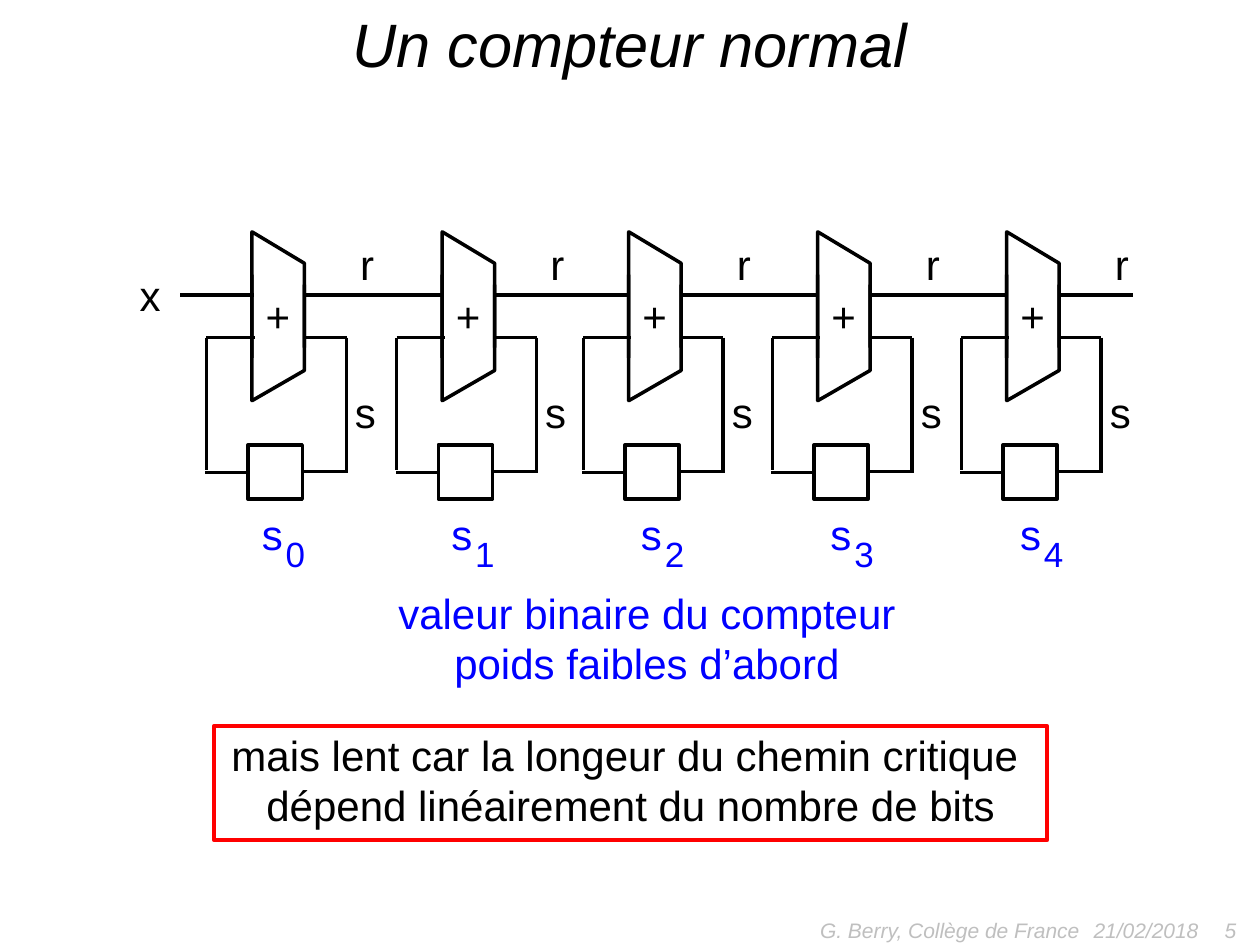
from dataclasses import dataclass
from typing import NamedTuple

from lxml.etree import SubElement
from pptx import Presentation
from pptx.dml.color import RGBColor
from pptx.enum.shapes import MSO_CONNECTOR, MSO_SHAPE
from pptx.enum.text import MSO_ANCHOR, MSO_AUTO_SIZE, PP_ALIGN
from pptx.oxml.ns import qn
from pptx.util import Pt


@dataclass(frozen=True)
class Theme:
    font: str = "Arial"
    black: RGBColor = RGBColor(0, 0, 0)
    blue: RGBColor = RGBColor(0, 0, 255)
    red: RGBColor = RGBColor(255, 0, 0)
    grey: RGBColor = RGBColor(0xBF, 0xBF, 0xBF)
    title: float = 35
    body: float = 24
    index: float = 20
    foot: float = 12
    wire: float = 2
    frame: float = 2.25


class Point(NamedTuple):
    x: float
    y: float


class Box(NamedTuple):
    left: float
    top: float
    width: float
    height: float

    def lengths(self) -> list:
        return [Pt(v) for v in self]


class Label(NamedTuple):
    text: str
    box: Box


class Wire(NamedTuple):
    start: Point
    end: Point


class Foot(NamedTuple):
    text: str
    box: Box
    align: PP_ALIGN


THEME = Theme()
LEFT, CENTER, RIGHT = PP_ALIGN.LEFT, PP_ALIGN.CENTER, PP_ALIGN.RIGHT

# Each stage is described relative to the left edge of its adder.
STAGES = (144, 252.7, 359.3, 467.3, 575.3)
CARRY, SUM, LOOP = 168.5, 193, 270
HALVES = (
    (Point(0, 157), Point(0, 229), Point(30, 211.7), Point(30, 162.7)),
    (Point(0, 204.5), Point(0, 132.5), Point(30, 150.5), Point(30, 198.7)),
)
WIRES = (
    Wire(Point(30, SUM), Point(54, SUM)),
    Wire(Point(30, CARRY), Point(72, CARRY)),
    Wire(Point(54, SUM), Point(54, LOOP)),
    Wire(Point(54, LOOP - 0.5), Point(29, LOOP - 0.5)),
    Wire(Point(-41, CARRY), Point(1, CARRY)),
    Wire(Point(-26, SUM), Point(1.5, SUM)),
    Wire(Point(-26, SUM), Point(-26, LOOP - 1.4)),
    Wire(Point(-3, LOOP), Point(-26.6, LOOP)),
)
LABELS = (
    Label("+", Box(0.7, 162.7, 28.8, 36.3)),
    Label("r", Box(54.7, 132.5, 22.3, 36.3)),
    Label("s", Box(51.8, 217.4, 26.6, 36.3)),
)
REGISTER = Box(-2.2, 254.2, 31, 31)
BITS_LEFT, BITS_STEP = 142.6, 108.3
FEET = (
    Foot("21/02/2018", Box(617.8, 517, 167.8, 28.8), LEFT),
    Foot(" 5", Box(545.8, 517, 167.8, 28.8), RIGHT),
    Foot("G. Berry, Collège de France", Box(396, 517, 228.2, 28.8), RIGHT),
)


def shift(box: Box, dx: float) -> Box:
    return box._replace(left=box.left + dx)


def write(frame, text: str, size: float, color: RGBColor,
          align: PP_ALIGN = LEFT, italic: bool = False) -> None:
    """Fill a text frame, one paragraph per line."""
    frame.text = text
    for para in frame.paragraphs:
        para.alignment = align
        font = para.font
        font.name, font.size, font.italic = THEME.font, Pt(size), italic
        font.color.rgb = color


def add_text(shapes, text: str, box: Box, size: float = THEME.body,
             color: RGBColor = THEME.black, align: PP_ALIGN = LEFT):
    frame = shapes.add_textbox(*box.lengths()).text_frame
    frame.word_wrap = False
    write(frame, text, size, color, align)


def outline(shape, color: RGBColor, width: float) -> None:
    shape.shadow.inherit = False
    shape.fill.background()
    shape.line.color.rgb = color
    shape.line.width = Pt(width)


def add_rect(shapes, box: Box, color: RGBColor = THEME.black,
             width: float = THEME.wire):
    rect = shapes.add_shape(MSO_SHAPE.RECTANGLE, *box.lengths())
    outline(rect, color, width)
    return rect


def add_half(shapes, half: tuple, dx: float) -> None:
    """Draw one open half of the adder outline."""
    first, *rest = [(Pt(x + dx), Pt(y)) for x, y in half]
    path = shapes.build_freeform(*first)
    path.add_line_segments(rest, close=False)
    outline(path.convert_to_shape(), THEME.black, THEME.wire)


def add_wire(shapes, wire: Wire, dx: float) -> None:
    start, end = wire
    line = shapes.add_connector(
        MSO_CONNECTOR.STRAIGHT, Pt(start.x + dx), Pt(start.y),
        Pt(end.x + dx), Pt(end.y))
    line.line.color.rgb = THEME.black
    line.line.width = Pt(THEME.wire)
    SubElement(line._element.spPr, qn("a:effectLst"))


def add_stage(shapes, dx: float) -> None:
    for half in HALVES:
        add_half(shapes, half, dx)
    for label in LABELS:
        add_text(shapes, label.text, shift(label.box, dx))
    for wire in WIRES:
        add_wire(shapes, wire, dx)
    add_rect(shapes, shift(REGISTER, dx))


def add_title(slide) -> None:
    title = slide.shapes.title
    title.left, title.top, title.width, title.height = Box(
        9, 0, 702, 49.7).lengths()
    frame = title.text_frame
    frame.auto_size = MSO_AUTO_SIZE.NONE
    write(frame, "Un compteur normal", THEME.title, THEME.black, CENTER, True)


def add_foot(shapes, foot: Foot) -> None:
    frame = shapes.add_textbox(*foot.box.lengths()).text_frame
    frame.word_wrap = True
    frame.vertical_anchor = MSO_ANCHOR.MIDDLE
    write(frame, foot.text, THEME.foot, THEME.grey, foot.align, True)


def add_bits(shapes) -> None:
    add_text(shapes, "valeur binaire du compteur\npoids faibles d’abord",
             Box(216, 332, 307.4, 65.5), color=THEME.blue, align=CENTER)
    for bit in range(len(STAGES)):
        left = BITS_LEFT + bit * BITS_STEP
        add_text(shapes, "s", Box(left, 287.3, 26.6, 36.3), color=THEME.blue)
        add_text(shapes, str(bit), Box(left + 13.6, 301, 25.9, 31),
                 THEME.index, THEME.blue)


def add_remark(shapes) -> None:
    rect = add_rect(shapes, Box(122.4, 414.7, 475.9, 65.5),
                    THEME.red, THEME.frame)
    frame = rect.text_frame
    frame.word_wrap = False
    frame.vertical_anchor = MSO_ANCHOR.TOP
    frame.margin_top, frame.margin_bottom = Pt(2), Pt(5)
    write(frame, "mais lent car la longeur du chemin critique \n"
          "dépend linéairement du nombre de bits",
          THEME.body, THEME.black, CENTER)


def main() -> None:
    deck = Presentation()
    deck.slide_width, deck.slide_height = Pt(720), Pt(540)
    slide = deck.slides.add_slide(deck.slide_layouts[5])
    shapes = slide.shapes
    for foot in FEET:
        add_foot(shapes, foot)
    add_title(slide)
    add_text(shapes, "x", Box(72.7, 150.5, 26.6, 36.3))
    for left in STAGES:
        add_stage(shapes.add_group_shape().shapes, left)
    add_bits(shapes.add_group_shape().shapes)
    add_remark(shapes)
    deck.save("out.pptx")


if __name__ == "__main__":
    main()
